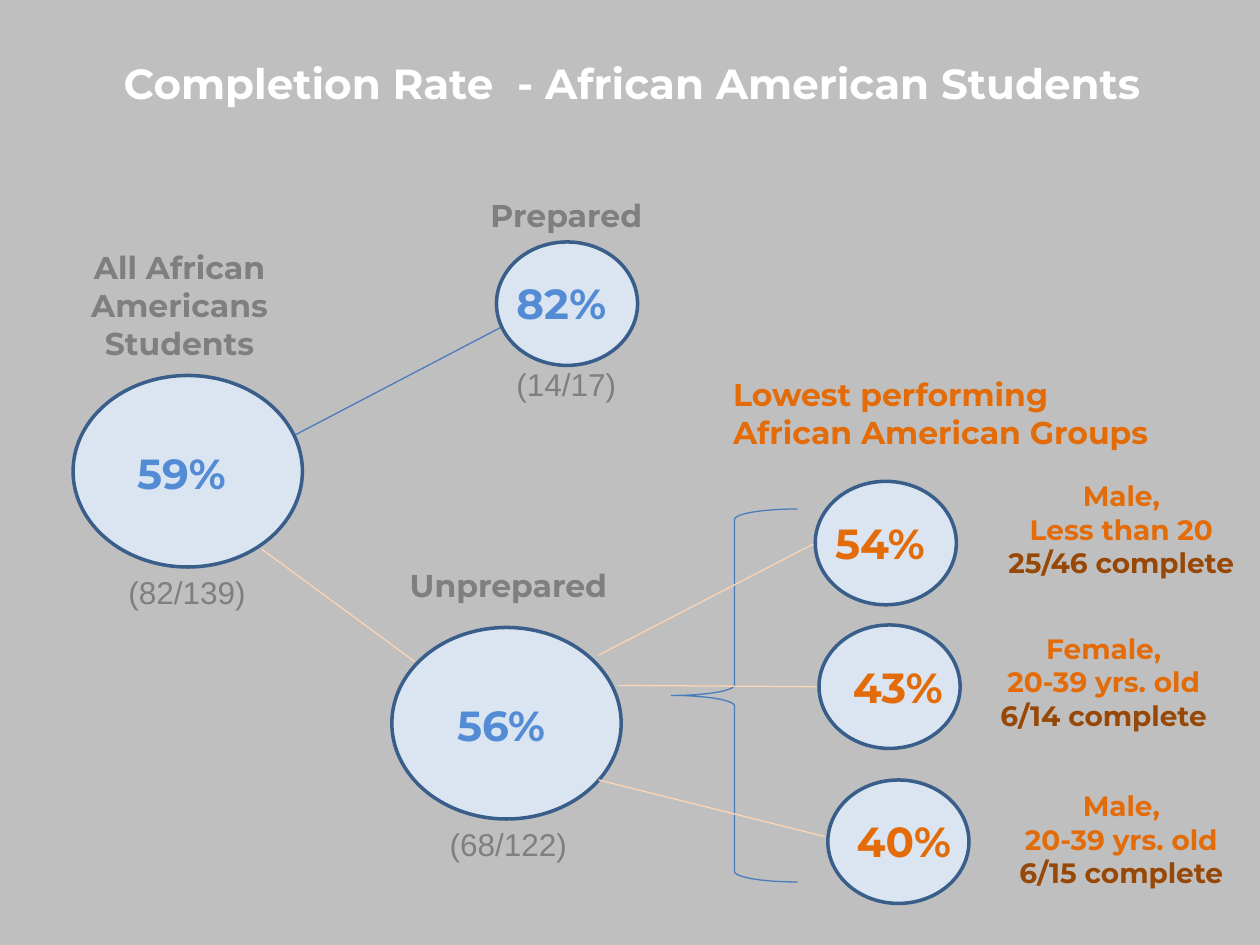
from lxml import etree
from pptx import Presentation
from pptx import util as u
from pptx.dml.color import RGBColor
from pptx.enum import shapes, text
from pptx.oxml import ns

GRAY = RGBColor(0xBF, 0xBF, 0xBF)
WHITE = RGBColor(0xFF, 0xFF, 0xFF)
LABEL = RGBColor(0x7F, 0x7F, 0x7F)
PALE_BLUE = RGBColor(0xDA, 0xE5, 0xF1)
NAVY = RGBColor(0x39, 0x5E, 0x8A)
LINE_BLUE = RGBColor(0x4A, 0x7D, 0xBB)
BLUE = RGBColor(0x53, 0x8C, 0xD5)
PEACH = RGBColor(0xFB, 0xD4, 0xB4)
ORANGE = RGBColor(0xE3, 0x6C, 0x09)
BROWN = RGBColor(0x97, 0x48, 0x06)
LARGE, SMALL = (1.82, 1.52), (1.12, 0.98)
CENTER, LEFT = text.PP_ALIGN.CENTER, text.PP_ALIGN.LEFT


class CompletionPage:
    """Draws the completion-rate tree on one page in a shared style."""

    heading_font = "Montserrat"
    count_font = "Arial"

    def __init__(self, deck):
        self.page = deck.slides.add_slide(deck.slide_layouts[5])
        fill = self.page.background.fill
        fill.solid()
        fill.fore_color.rgb = GRAY

    def set_text(self, box, lines, size, align, font, bold):
        frame = box.text_frame
        frame.word_wrap = True
        frame.auto_size = text.MSO_AUTO_SIZE.NONE
        frame.vertical_anchor = text.MSO_ANCHOR.TOP
        for index, (words, color) in enumerate(lines):
            para = frame.add_paragraph() if index else frame.paragraphs[0]
            para.alignment = align
            span = para.add_run()
            span.text = words
            span.font.name = font
            span.font.size = u.Pt(size)
            span.font.bold = bold
            span.font.color.rgb = color

    def title(self, words, place):
        box = self.page.shapes.title
        box.left, box.top, box.width, box.height = map(u.Inches, place)
        self.set_text(box, [(words, WHITE)], 24, CENTER, self.heading_font, True)

    def label(self, lines, place, size=18, align=CENTER):
        box = self.page.shapes.add_textbox(*map(u.Inches, place))
        self.set_text(box, lines, size, align, self.heading_font, True)

    def count(self, words, left, top):
        box = self.page.shapes.add_textbox(*map(u.Inches, (left, top, 1.28, 0.4)))
        self.set_text(box, [(words, LABEL)], 18, LEFT, self.count_font, False)

    def bubble(self, left, top, size, rate, rate_left, rate_top, color):
        oval = self.page.shapes.add_shape(
            shapes.MSO_SHAPE.OVAL, *map(u.Inches, (left, top, *size)))
        oval.shadow.inherit = False
        oval.fill.solid()
        oval.fill.fore_color.rgb = PALE_BLUE
        oval.line.color.rgb = NAVY
        oval.line.width = u.Pt(2)
        self.label([(rate, color)], (rate_left, rate_top, 1.22, 0.5), 24, LEFT)

    def brace(self, place):
        brace = self.page.shapes.add_shape(
            shapes.MSO_SHAPE.LEFT_BRACE, *map(u.Inches, place))
        brace.shadow.inherit = False
        brace.fill.background()
        brace.line.color.rgb = LINE_BLUE
        brace.line.width = u.Pt(0.75)

    def link(self, start, end, color=PEACH):
        line = self.page.shapes.add_connector(
            shapes.MSO_CONNECTOR.STRAIGHT, *map(u.Inches, (*start, *end)))
        line.line.color.rgb = color
        line.line.width = u.Pt(0.75)
        etree.SubElement(line._element.spPr, ns.qn("a:effectLst"))


def main():
    deck = Presentation()
    deck.slide_width, deck.slide_height = u.Inches(10), u.Inches(7.5)
    page = CompletionPage(deck)
    page.title("Completion Rate  - African American Students", (0.17, 0.41, 9.69, 0.5))

    page.link((2.25, 3.5), (4.01, 2.58), LINE_BLUE)
    page.bubble(3.94, 1.92, SMALL, "82%", 4, 2.15, BLUE)
    page.label([("Prepared ", LABEL)], (3.75, 1.51, 1.56, 0.71))
    page.count("(14/17)", 4, 2.85)

    page.bubble(3.11, 4.98, LARGE, "56%", 3.53, 5.5, BLUE)
    page.label([("Unprepared", LABEL)], (3.08, 4.44, 1.91, 0.71))
    page.count("(68/122)", 3.47, 6.5)
    page.link((2.08, 4.36), (3.29, 5.25))

    page.bubble(0.58, 2.98, LARGE, "59%", 0.99, 3.5, BLUE)
    page.label([("All African Americans Students", LABEL)], (0.59, 1.92, 1.67, 0.5))
    page.count("(82/139)", 0.92, 4.5)

    page.brace((5.33, 4.04, 1, 2.96))
    page.label([("Lowest performing", ORANGE), ("African American Groups", ORANGE)],
               (5.72, 2.93, 4.13, 0.71), align=LEFT)
    groups = [
        ("54%", (6.47, 3.82), (6.53, 4.06), (4.75, 5.2), (6.47, 4.31),
         (7.75, 3.75), ("Male,", "Less than 20", "25/46 complete")),
        ("43%", (6.5, 4.96), (6.67, 5.2), (4.9, 5.44), (6.5, 5.45),
         (7.61, 4.96), ("Female,", "20-39 yrs. old", "6/14 complete")),
        ("40%", (6.57, 6.19), (6.7, 6.42), (4.75, 6.19), (6.55, 6.64),
         (7.75, 6.21), ("Male,", "20-39 yrs. old", "6/15 complete")),
    ]
    for rate, oval, rate_at, start, end, note_at, words in groups:
        page.link(start, end)
        page.bubble(*oval, SMALL, rate, *rate_at, ORANGE)
        page.label(list(zip(words, (ORANGE, ORANGE, BROWN))), (*note_at, 2.3, 0.91), 16)

    deck.save("out.pptx")


if __name__ == "__main__":
    main()
